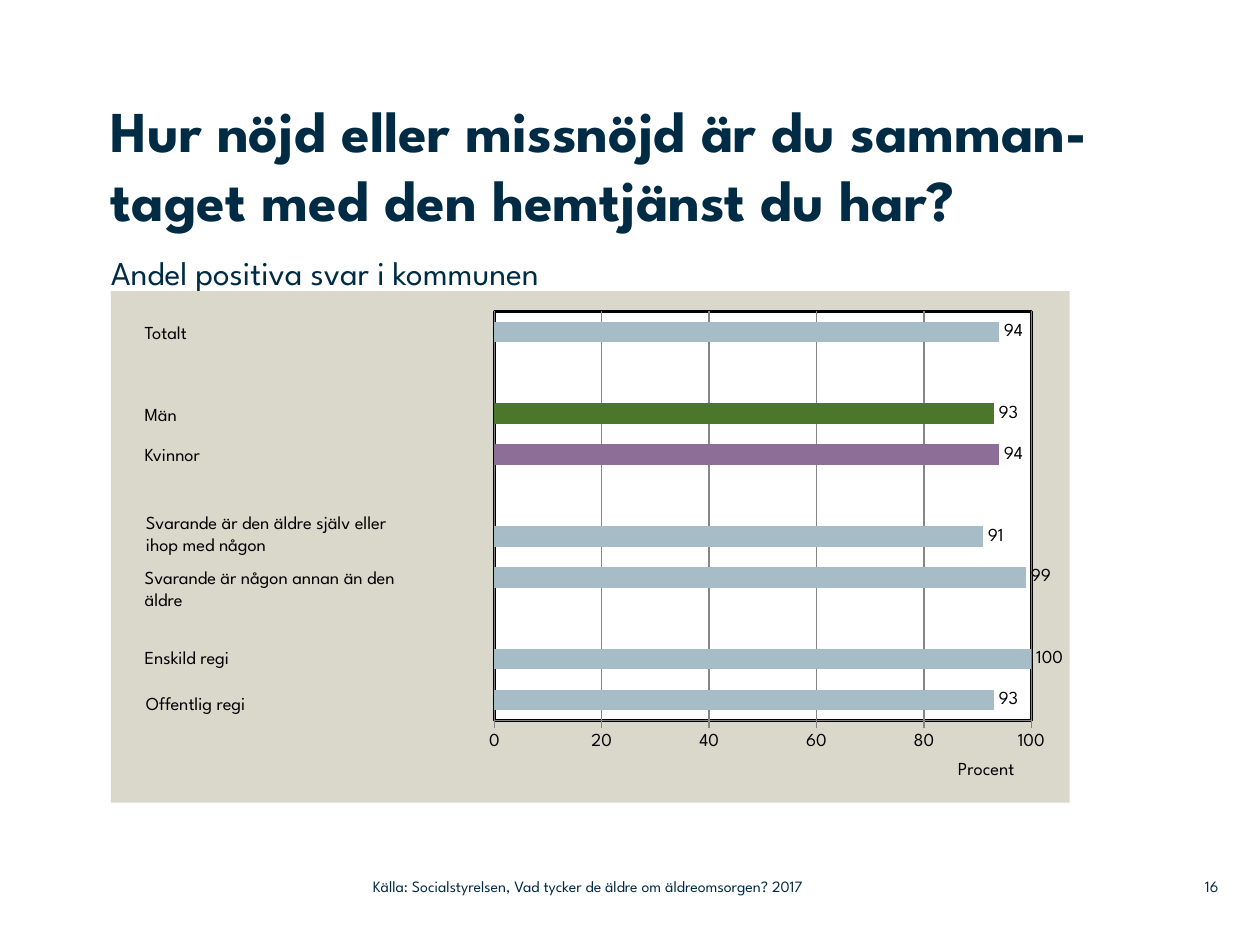
from pptx import Presentation
from pptx.chart.data import CategoryChartData
from pptx.dml.color import RGBColor
from pptx.enum.chart import XL_CHART_TYPE, XL_LABEL_POSITION, XL_TICK_LABEL_POSITION, XL_TICK_MARK
from pptx.enum.text import MSO_ANCHOR, PP_ALIGN
from pptx.oxml import parse_xml
from pptx.oxml.ns import nsdecls, qn
from pptx.util import Inches, Pt

FONT = "League Spartan"
NAVY, BLACK, WHITE, GREY = "002B45", "000000", "FFFFFF", "868686"
SAND, BLUE, GREEN, PURPLE = "DAD7CB", "A6BCC6", "4A7729", "8D6E97"
LEFT = 0.88

# Chart rows from bottom to top; None leaves a gap between groups
BARS = [(93, BLUE), (100, BLUE), (None, None), (99, BLUE), (91, BLUE),
        (None, None), (94, PURPLE), (93, GREEN), (None, None), (94, BLUE)]

# Left, top, width and lines of each row label
ROW_LABELS = [
    (1.05, 2.5, 0.59, ["Totalt"]),
    (1.05, 3.15, 0.53, ["Män"]),
    (1.05, 3.47, 0.72, ["Kvinnor"]),
    (1.06, 4.01, 2.53, ["Svarande är den äldre själv eller", "ihop med någon"]),
    (1.05, 4.44, 2.65, ["Svarande är någon annan än den", "äldre"]),
    (1.05, 5.08, 1.49, ["Enskild regi"]),
    (1.06, 5.44, 1.81, ["Offentlig regi"]),
]


def rgb(code):
    return RGBColor.from_string(code)


def style_font(font, size, color, bold=False):
    font.name, font.size, font.bold = FONT, Pt(size), bold
    font.color.rgb = rgb(color)


def fill_frame(frame, lines, size, color, bold=False, align=PP_ALIGN.LEFT):
    for index, line in enumerate(lines):
        para = frame.add_paragraph() if index else frame.paragraphs[0]
        para.text = line
        para.alignment = align
        style_font(para.font, size, color, bold)


def clear_margins(frame):
    frame.margin_left = frame.margin_right = frame.margin_top = frame.margin_bottom = 0


def add_title(page, text):
    title = page.shapes.title
    title.left, title.top, title.width, title.height = map(Inches, (LEFT, 0.75, 8.83, 1.42))
    frame = title.text_frame
    clear_margins(frame)
    frame.vertical_anchor = MSO_ANCHOR.TOP
    fill_frame(frame, [text], 33, NAVY, bold=True)


def add_text(page, place, lines, size, color, align=PP_ALIGN.LEFT,
             anchor=MSO_ANCHOR.TOP, margins=False, wrap=True):
    frame = page.shapes.add_textbox(*map(Inches, place)).text_frame
    frame.word_wrap = wrap
    frame.vertical_anchor = anchor
    if not margins:
        clear_margins(frame)
    fill_frame(frame, lines, size, color, align=align)


def set_layout(element, index, x, y, size=None):
    """Place a chart part by shares of the chart's size."""
    for old in element.findall(qn("c:layout")):
        element.remove(old)
    target = '<c:layoutTarget val="inner"/>' if size else ""
    extent = '<c:w val="{}"/><c:h val="{}"/>'.format(*size) if size else ""
    element.insert(index, parse_xml(
        f'<c:layout {nsdecls("c")}><c:manualLayout>{target}'
        f'<c:xMode val="edge"/><c:yMode val="edge"/>'
        f'<c:x val="{x}"/><c:y val="{y}"/>{extent}</c:manualLayout></c:layout>'))


def shape_properties(fill, line=None, points=1):
    border = f'<a:solidFill><a:srgbClr val="{line}"/></a:solidFill>' if line else "<a:noFill/>"
    return parse_xml(
        f'<c:spPr {nsdecls("c", "a")}><a:solidFill><a:srgbClr val="{fill}"/></a:solidFill>'
        f'<a:ln w="{Pt(points)}">{border}</a:ln></c:spPr>')


def style_value_axis(axis):
    axis.minimum_scale, axis.maximum_scale, axis.major_unit = 0, 100, 20
    axis.major_tick_mark = XL_TICK_MARK.OUTSIDE
    axis.tick_label_position = XL_TICK_LABEL_POSITION.NEXT_TO_AXIS
    axis.has_major_gridlines = True
    for line in (axis.format.line, axis.major_gridlines.format.line):
        line.color.rgb = rgb(GREY)
        line.width = Pt(0.75)
    style_font(axis.tick_labels.font, 10.5, BLACK)
    fill_frame(axis.axis_title.text_frame, ["Procent"], 10.5, BLACK)
    set_layout(axis.axis_title._element, 1, 0.88, 0.91)


def add_bar_chart(page):
    data = CategoryChartData()
    data.categories = [str(number) for number in range(1, len(BARS) + 1)]
    data.add_series("Series 1", [value for value, _ in BARS])
    chart = page.shapes.add_chart(
        XL_CHART_TYPE.BAR_CLUSTERED, *map(Inches, (LEFT, 2.31, 7.61, 4.06)), data).chart
    chart.has_title = chart.has_legend = False
    style_font(chart.font, 10.5, BLACK)
    chart.category_axis.visible = False
    style_value_axis(chart.value_axis)

    plot = chart.plots[0]
    plot.gap_width, plot.overlap, plot.vary_by_categories = 100, -25, False
    plot.has_data_labels = True
    labels = plot.data_labels
    labels.show_value = True
    labels.position = XL_LABEL_POSITION.OUTSIDE_END
    style_font(labels.font, 10.5, BLACK)

    series = plot.series[0]
    series.format.fill.solid()
    series.format.fill.fore_color.rgb = rgb(GREEN)
    for index, (value, color) in enumerate(BARS):
        if value is not None and color != GREEN:
            fill = series.points[index].format.fill
            fill.solid()
            fill.fore_color.rgb = rgb(color)

    space = chart._chartSpace
    area = space.chart.plotArea
    set_layout(area, 0, 0.4, 0.04, (0.56, 0.8))
    area.append(shape_properties(WHITE, BLACK, 2))
    space.chart.addnext(shape_properties(SAND))


def main():
    deck = Presentation()
    deck.slide_width, deck.slide_height = Inches(10), Inches(7.5)
    page = deck.slides.add_slide(deck.slide_layouts[5])
    add_title(page, "Hur nöjd eller missnöjd är du samman- taget med den hemtjänst du har?")
    add_text(page, (LEFT, 2, 6.49, 0.45), ["Andel positiva svar i kommunen"], 19, NAVY)
    add_bar_chart(page)
    for left, top, width, lines in ROW_LABELS:
        height = 0.28 if len(lines) == 1 else 0.45
        add_text(page, (left, top, width, height), lines, 10.5, BLACK, margins=True, wrap=False)
    add_text(page, (9.2, 6.89, 0.47, 0.29), ["16"], 9, NAVY,
             align=PP_ALIGN.RIGHT, anchor=MSO_ANCHOR.MIDDLE)
    add_text(page, (2.96, 6.89, 4.43, 0.29),
             ["Källa: Socialstyrelsen, Vad tycker de äldre om äldreomsorgen? 2017"],
             9, NAVY, anchor=MSO_ANCHOR.MIDDLE)
    deck.save("out.pptx")


if __name__ == "__main__":
    main()
